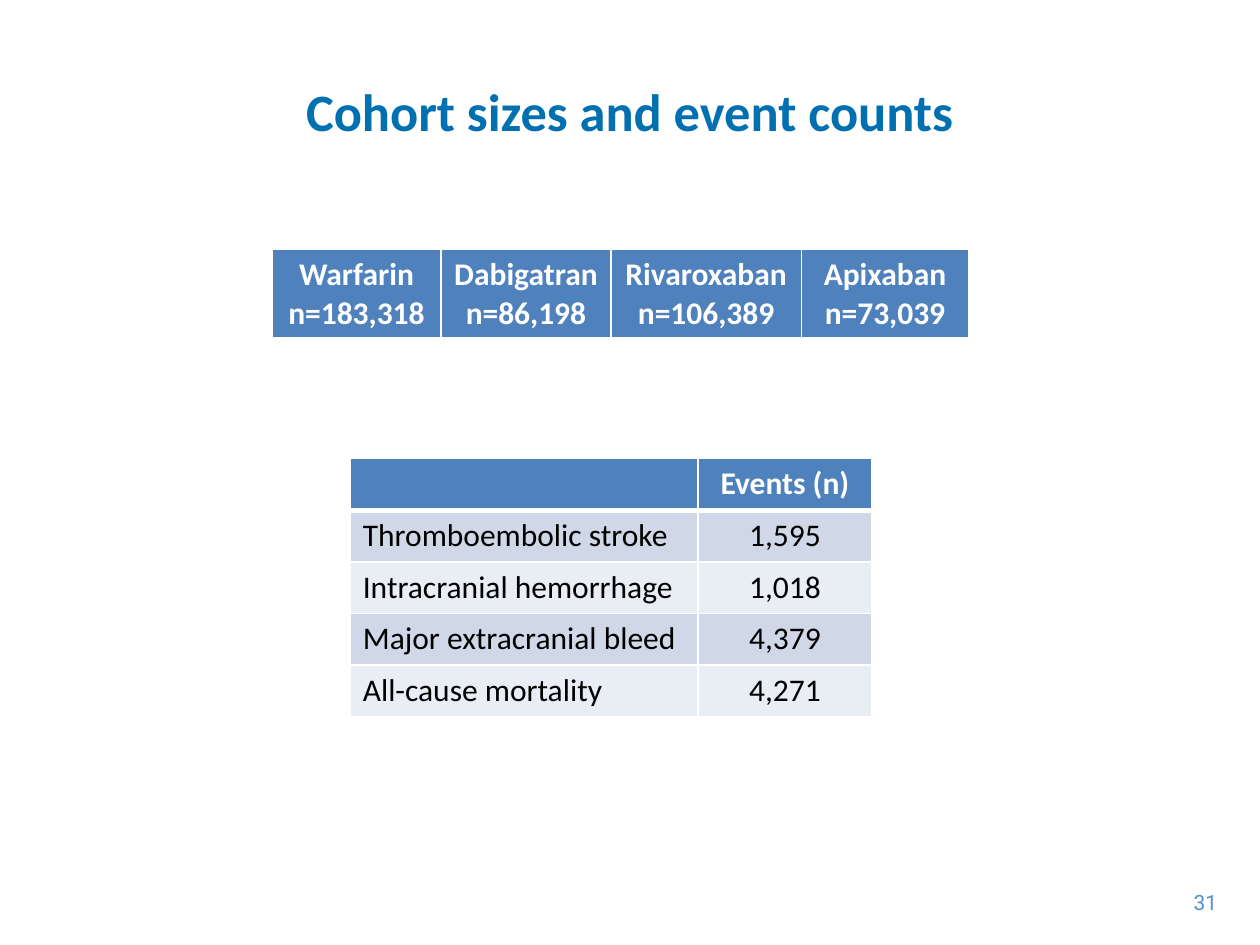
from pptx import Presentation
from pptx.dml.color import RGBColor
from pptx.enum.text import MSO_ANCHOR, PP_ALIGN
from pptx.oxml.ns import qn
from pptx.util import Inches, Pt
from lxml.etree import SubElement

TITLE = "Cohort sizes and event counts"
PAGE = "31"
COHORTS = [["Warfarin\nn=183,318", "Dabigatran\nn=86,198",
            "Rivaroxaban\nn=106,389", "Apixaban\nn=73,039"]]
EVENTS = [["", "Events (n)"],
          ["Thromboembolic stroke", "1,595"],
          ["Intracranial hemorrhage", "1,018"],
          ["Major extracranial bleed", "4,379"],
          ["All-cause mortality", "4,271"]]
HEAD, BANDS = "4F81BD", ("D0D8E8", "E9EDF4")
WHITE, BLACK = "FFFFFF", "000000"
LEFT, CENTER, RIGHT = PP_ALIGN.LEFT, PP_ALIGN.CENTER, PP_ALIGN.RIGHT


def rgb(color):
    return RGBColor.from_string(color)


def write(tf, text, size, color, align, bold=False, font="Calibri"):
    """Fill a text frame, one paragraph per line of text."""
    for i, line in enumerate(text.split("\n")):
        p = tf.add_paragraph() if i else tf.paragraphs[0]
        p.alignment = align
        p.font.size = Pt(size)
        r = p.add_run()
        r.text = line
        r.font.name, r.font.size, r.font.bold = font, Pt(size), bold
        r.font.color.rgb = rgb(color)


def set_borders(cell, bottom):
    """Draw white borders; they must precede the fill in the cell's XML."""
    tcPr = cell._tc.get_or_add_tcPr()
    for side, width in (("L", 1), ("R", 1), ("T", 1), ("B", bottom)):
        ln = SubElement(tcPr, qn(f"a:ln{side}"), w=str(Pt(width)))
        fill = SubElement(ln, qn("a:solidFill"))
        SubElement(fill, qn("a:srgbClr"), val=WHITE)


def add_grid(s, rows, left, top, widths, row_height):
    table = s.shapes.add_table(
        len(rows), len(widths), Inches(left), Inches(top),
        Inches(sum(widths)), Inches(row_height * len(rows))).table
    for col, width in zip(table.columns, widths):
        col.width = Inches(width)
    for i, row in enumerate(rows):
        head = i == 0
        for j, text in enumerate(row):
            cell = table.cell(i, j)
            set_borders(cell, 3 if head else 1)
            cell.fill.solid()
            cell.fill.fore_color.rgb = rgb(HEAD if head else BANDS[(i - 1) % 2])
            write(cell.text_frame, text, 18, WHITE if head else BLACK,
                  CENTER if head or j else LEFT, bold=head)


prs = Presentation()
prs.slide_width, prs.slide_height = Inches(10), Inches(7.5)
s = prs.slides.add_slide(prs.slide_layouts[5])

title = s.shapes.title
title.left, title.top = Inches(0.5), Inches(0.25)
title.width, title.height = Inches(9), Inches(1.25)
title.text_frame.vertical_anchor = MSO_ANCHOR.MIDDLE
write(title.text_frame, TITLE, 30, "0070B0", CENTER, bold=True)

add_grid(s, COHORTS, 2.16, 1.98, [1.34, 1.35, 1.51, 1.33], 0.7)
add_grid(s, EVENTS, 2.78, 3.64, [2.76, 1.38], 0.41)

number = s.shapes.add_textbox(Inches(9.35), Inches(7.01), Inches(0.41), Inches(0.3))
number.text_frame.word_wrap = False
write(number.text_frame, PAGE, 12, "558ED5", RIGHT, font="Roboto")

prs.save("out.pptx")
